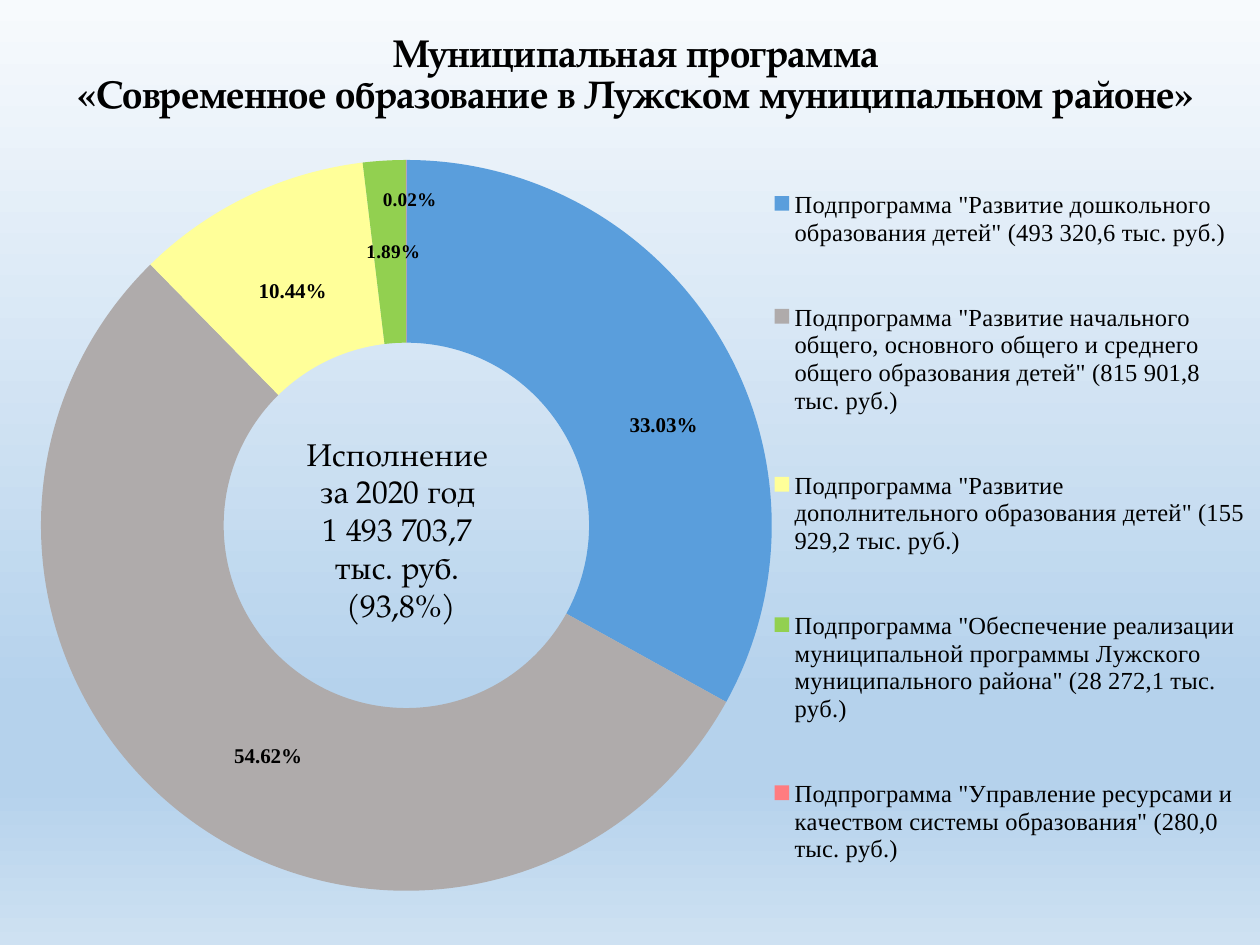
from dataclasses import dataclass

import pptx
import pptx.chart.data
import pptx.dml.color
import pptx.enum.chart
import pptx.enum.text
import pptx.oxml
import pptx.oxml.ns
import pptx.util
from pptx.util import Inches


@dataclass(frozen=True)
class Theme:
    text: str = "000000"
    title_font: str = "TeX Gyre Pagella"
    chart_font: str = "Times New Roman"
    title_size: int = 22
    total_size: int = 18
    legend_size: int = 14
    label_size: int = 12
    small_label_size: int = 11
    background: tuple = ((0, "F7FAFD"), (74, "B5D2EC"), (83, "B5D2EC"), (100, "CEE1F2"))


THEME = Theme()

CHART_BOX = (0.2, 0.92, 9.8, 6.58)
# Places inside the chart, in inches
PLOT_BOX = (0.09, 0.35, 5.87, 5.8)
LEGEND_BOX = (5.96, 0.14, 3.77, 6.25)

# Subprogramme, share in percent, colour, label size, label shift in inches
SUBPROGRAMMES = [
    ('Подпрограмма "Развитие дошкольного образования детей" (493 320,6 тыс. руб.)',
     33.03, "5A9EDC", THEME.label_size, (0.17, 0.31)),
    ('Подпрограмма "Развитие начального общего, основного общего и среднего общего '
     'образования детей" (815 901,8 тыс. руб.)',
     54.62, "AFABAB", THEME.label_size, (0.22, 0.1)),
    ('Подпрограмма "Развитие дополнительного образования детей" (155 929,2 тыс. руб.)',
     10.44, "FFFF99", THEME.label_size, (0.04, 0.1)),
    ('Подпрограмма "Обеспечение реализации муниципальной программы Лужского '
     'муниципального района" (28 272,1 тыс. руб.)',
     1.89, "92D050", THEME.small_label_size, (0.03, 0)),
    ('Подпрограмма "Управление ресурсами и качеством системы образования" '
     '(280,0 тыс. руб.)', 0.02, "FF7C80", THEME.small_label_size, (0.03, -0.41)),
]


def rgb(value):
    return pptx.dml.color.RGBColor.from_string(value)


def qn(tag):
    return pptx.oxml.ns.qn(tag)


def chart_xml(tag, content):
    namespaces = pptx.oxml.ns.nsdecls("c", "a")
    return pptx.oxml.parse_xml(f"<c:{tag} {namespaces}>{content}</c:{tag}>")


def format_font(font, name, size, bold=False):
    values = {"name": name, "size": pptx.util.Pt(size), "bold": bold}
    for attribute, value in values.items():
        setattr(font, attribute, value)
    font.color.rgb = rgb(THEME.text)


def set_background(slide):
    fill = slide.background.fill
    fill.gradient()
    gradient = slide.background._cSld.find(".//" + qn("a:gradFill"))
    for child in list(gradient):
        gradient.remove(child)
    stops = "".join(
        f'<a:gs pos="{position * 1000}"><a:srgbClr val="{color}"/></a:gs>'
        for position, color in THEME.background)
    namespaces = pptx.oxml.ns.nsdecls("a")
    gradient.append(pptx.oxml.parse_xml(f"<a:gsLst {namespaces}>{stops}</a:gsLst>"))
    gradient.append(pptx.oxml.parse_xml(f'<a:lin {namespaces} ang="5400000" scaled="0"/>'))


def add_text(slide, box, lines, size, anchor, bold=False, line_spacing=1.0):
    shape = slide.shapes.add_textbox(*map(Inches, box))
    frame = shape.text_frame
    frame.word_wrap = True
    frame.vertical_anchor = anchor
    frame.text = "\n".join(lines)
    for paragraph in frame.paragraphs:
        paragraph.alignment = pptx.enum.text.PP_ALIGN.CENTER
        paragraph.line_spacing = line_spacing
        for run in paragraph.runs:
            format_font(run.font, THEME.title_font, size, bold)


def manual_layout(places, leading=""):
    """Write places in inches as fractions of the chart."""
    values = "".join(
        f'<c:{key} val="{place / whole:.4f}"/>'
        for key, place, whole in zip("xywh", places, CHART_BOX[2:] * 2))
    return f"<c:manualLayout>{leading}{values}</c:manualLayout>"


def set_layout(parent, index, box, inner=False):
    existing = parent.find(qn("c:layout"))
    if existing is not None:
        parent.remove(existing)
    target = '<c:layoutTarget val="inner"/>' if inner else ""
    modes = '<c:xMode val="edge"/><c:yMode val="edge"/>'
    parent.insert(index, chart_xml("layout", manual_layout(box, target + modes)))


def add_label(labels, index, size, shift):
    """Give one percentage label its own size and shift."""
    shown = "".join(
        f'<c:show{part} val="{int(part == "Percent")}"/>'
        for part in ("LegendKey", "Val", "CatName", "SerName", "Percent", "BubbleSize"))
    font = (
        f'<a:defRPr sz="{size * 100}" b="1"><a:solidFill><a:srgbClr val="{THEME.text}"/>'
        f'</a:solidFill><a:latin typeface="{THEME.chart_font}"/></a:defRPr>')
    label = chart_xml("dLbl", (
        f'<c:idx val="{index}"/><c:layout>{manual_layout(shift)}</c:layout>'
        f'<c:txPr><a:bodyPr/><a:p><a:pPr>{font}</a:pPr></a:p></c:txPr>{shown}'))
    labels._element.insert(index, label)


def add_doughnut(slide):
    names, shares, colors, sizes, shifts = zip(*SUBPROGRAMMES)
    data = pptx.chart.data.CategoryChartData()
    data.categories = names
    data.add_series("Series 1", shares)
    kind = pptx.enum.chart.XL_CHART_TYPE.DOUGHNUT
    chart = slide.shapes.add_chart(kind, *map(Inches, CHART_BOX), data).chart
    chart.has_title = False
    format_font(chart.font, "Calibri", 18)
    plot = chart.plots[0]
    plot.vary_by_categories = True
    set_layout(plot._element.getparent(), 0, PLOT_BOX, inner=True)

    # Slices
    series = plot.series[0]
    for index, color in enumerate(colors):
        slice_format = series.points[index].format
        slice_format.fill.solid()
        slice_format.fill.fore_color.rgb = rgb(color)
        slice_format.line.fill.background()

    # Percentage labels
    labels = series.data_labels
    values = {"show_percentage": True, "show_value": False, "show_category_name": False,
              "show_legend_key": False, "number_format": "0.00%",
              "number_format_is_linked": False}
    for attribute, value in values.items():
        setattr(labels, attribute, value)
    format_font(labels.font, THEME.chart_font, THEME.small_label_size, bold=True)
    for index, (size, shift) in enumerate(zip(sizes, shifts)):
        add_label(labels, index, size, shift)

    # Legend
    chart.has_legend = True
    legend = chart.legend
    legend.position = pptx.enum.chart.XL_LEGEND_POSITION.RIGHT
    legend.include_in_layout = False
    format_font(legend.font, THEME.chart_font, THEME.legend_size)
    set_layout(legend._element, 1, LEGEND_BOX)


def main():
    presentation = pptx.Presentation()
    presentation.slide_width = Inches(10)
    presentation.slide_height = Inches(7.5)
    slide = presentation.slides.add_slide(presentation.slide_layouts[6])
    set_background(slide)
    anchors = pptx.enum.text.MSO_ANCHOR

    # Shares of the subprogrammes
    add_doughnut(slide)

    # Title, one paragraph with a line break
    add_text(slide, (0.28, 0.13, 9.61, 0.94),
             ["Муниципальная программа \v«Современное образование в Лужском муниципальном районе» "],
             THEME.title_size, anchors.MIDDLE, bold=True, line_spacing=0.9)

    # Total in the hole of the doughnut
    add_text(slide, (1.77, 3.4, 2.83, 1.62),
             ["Исполнение ", "за 2020 год ", "1 493 703,7 ", "тыс. руб. ", "(93,8%)"],
             THEME.total_size, anchors.TOP)
    presentation.save("out.pptx")


if __name__ == "__main__":
    main()
